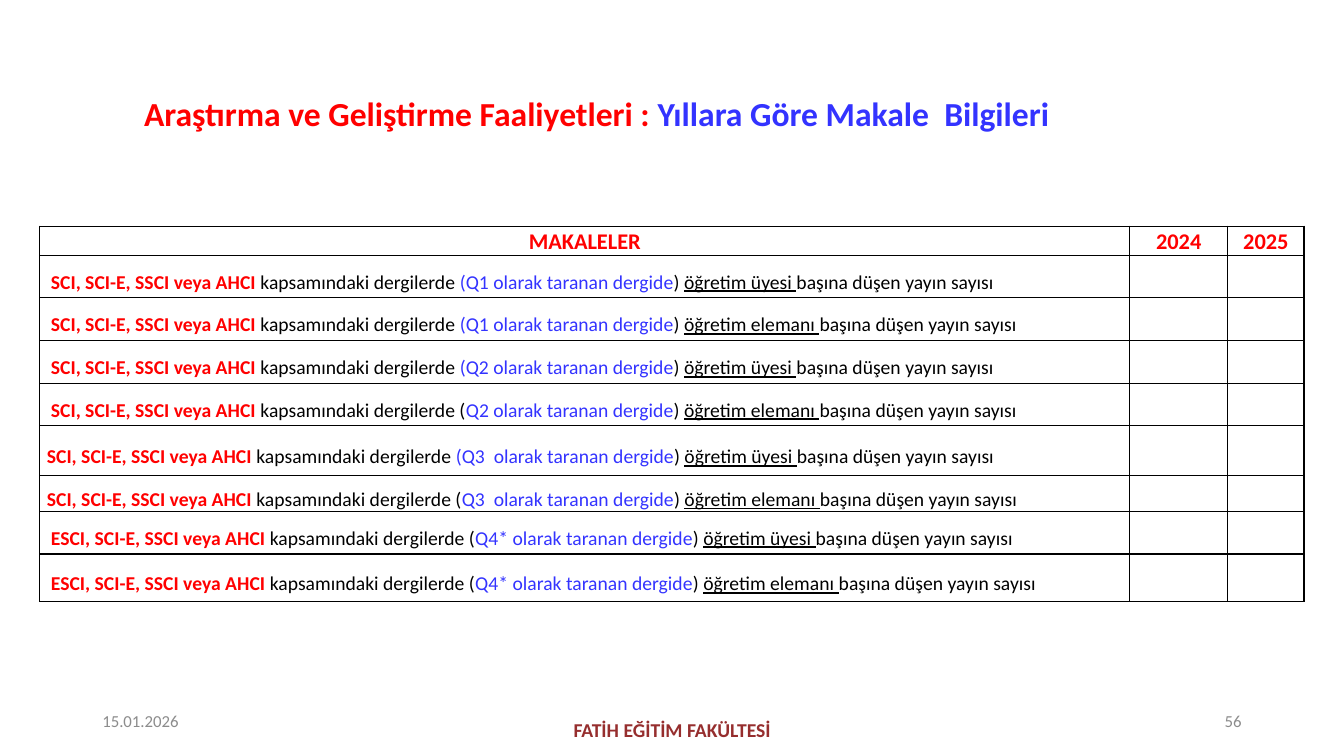
from dataclasses import dataclass

from lxml import etree
from pptx import Presentation
from pptx import util as u
from pptx.dml.color import RGBColor
from pptx.enum import text
from pptx.oxml import ns


@dataclass(frozen=True)
class Theme:
    font: str = "Calibri"
    red: str = "FF0000"
    blue: str = "3333FF"
    black: str = "000000"
    grey: str = "8C8C8C"
    maroon: str = "962E2E"
    title: int = 24
    header: int = 16
    body: int = 14
    small: int = 12


theme = Theme()
LEFT, CENTER, RIGHT = (text.PP_ALIGN.LEFT, text.PP_ALIGN.CENTER,
                       text.PP_ALIGN.RIGHT)


def write(p, txt, size=theme.body, color=theme.black, bold=False,
          underline=False, align=LEFT, spacing=1.0):
    """Append a formatted run to paragraph p and set the paragraph's layout."""
    p.alignment = align
    p.line_spacing = spacing
    r = p.add_run()
    r.text = txt
    r.font.name = theme.font
    r.font.size = u.Pt(size)
    r.font.color.rgb = RGBColor.from_string(color)
    r.font.bold = bold
    r.font.underline = underline


def add_border(cell):
    tc_pr = cell._tc.get_or_add_tcPr()
    for side in ("lnL", "lnR", "lnT", "lnB"):
        ln = etree.SubElement(tc_pr, ns.qn(f"a:{side}"), w=str(u.Pt(1)))
        fill = etree.SubElement(ln, ns.qn("a:solidFill"))
        etree.SubElement(fill, ns.qn("a:srgbClr"), val=theme.black)


prs = Presentation()
prs.slide_width, prs.slide_height = u.Pt(960), u.Pt(540)
s = prs.slides.add_slide(prs.slide_layouts[6])

# Title and footer
title = dict(size=theme.title, bold=True, align=CENTER, spacing=0.9)
small = dict(size=theme.small, color=theme.grey)
text_boxes = [
    ((318.2, 506.9, 324, 28.8),
     [("FATİH EĞİTİM FAKÜLTESİ",
       dict(color=theme.maroon, bold=True, align=CENTER))]),
    ((18.7, 64.8, 815, 35.3),
     [("Araştırma ve Geliştirme Faaliyetleri : ", dict(title, color=theme.red)),
      ("Yıllara Göre Makale  Bilgileri", dict(title, color=theme.blue))]),
    ((66, 500.4, 216, 28.8), [("15.01.2026", small)]),
    ((678, 500.4, 216, 28.8), [("56", dict(small, align=RIGHT))]),
]
for box, runs in text_boxes:
    tf = s.shapes.add_textbox(*map(u.Pt, box)).text_frame
    tf.word_wrap = True
    tf.vertical_anchor = text.MSO_ANCHOR.MIDDLE
    for txt, fmt in runs:
        write(tf.paragraphs[0], txt, **fmt)

# Article table: index prefix, opening text, quartile, staff, indent, row height
MEMBER, STAFF = "öğretim üyesi ", "öğretim elemanı "
articles = [
    ("SCI", "", "(Q1", MEMBER, 2.9, 30.5),
    ("SCI", "", "(Q1", STAFF, 2.9, 30.5),
    ("SCI", "", "(Q2", MEMBER, 2.9, 30.5),
    ("SCI", "(", "Q2", STAFF, 2.9, 30.5),
    ("SCI", "", "(Q3 ", MEMBER, 0, 35.7),
    ("SCI", "(", "Q3 ", STAFF, 0, 25.4),
    ("ESCI", "(", "Q4*", MEMBER, 2.9, 30.4),
    ("ESCI", "(", "Q4*", STAFF, 2.9, 34.2),
]
headings = ["MAKALELER", "2024", "2025"]
col_widths = [778.5, 70, 54.5]
row_heights = [20.7] + [article[-1] for article in articles]

table = s.shapes.add_table(
    len(row_heights), len(col_widths), u.Pt(28.5), u.Pt(161.6),
    u.Pt(sum(col_widths)), u.Pt(sum(row_heights))).table
table.first_row = False
table.horz_banding = False
for column, width in zip(table.columns, col_widths):
    column.width = u.Pt(width)
for row, height in zip(table.rows, row_heights):
    row.height = u.Pt(height)

for cell in table.iter_cells():
    add_border(cell)
    cell.fill.background()
    cell.vertical_anchor = text.MSO_ANCHOR.MIDDLE
    cell.margin_left = cell.margin_right = u.Pt(5)
    cell.margin_top = cell.margin_bottom = 0
    cell.text_frame.paragraphs[0].font.size = u.Pt(theme.body)

for col, heading in enumerate(headings):
    write(table.cell(0, col).text_frame.paragraphs[0], heading,
          size=theme.header, color=theme.red, bold=True, align=CENTER,
          spacing=1.07)

for row, (index, opening, quartile, people, indent, _) in enumerate(articles, 1):
    p = table.cell(row, 0).text_frame.paragraphs[0]
    p_pr = p._p.get_or_add_pPr()
    p_pr.set("marL", str(u.Pt(indent)))
    p_pr.set("indent", "0")
    for txt, fmt in [
        (f"{index}, SCI-E, SSCI veya AHCI ", dict(color=theme.red, bold=True)),
        (f"kapsamındaki dergilerde {opening}", {}),
        (f"{quartile} olarak taranan dergide", dict(color=theme.blue)),
        (") ", {}),
        (people, dict(underline=True)),
        ("başına düşen yayın sayısı", {}),
    ]:
        write(p, txt, spacing=1.5, **fmt)

prs.save("out.pptx")
